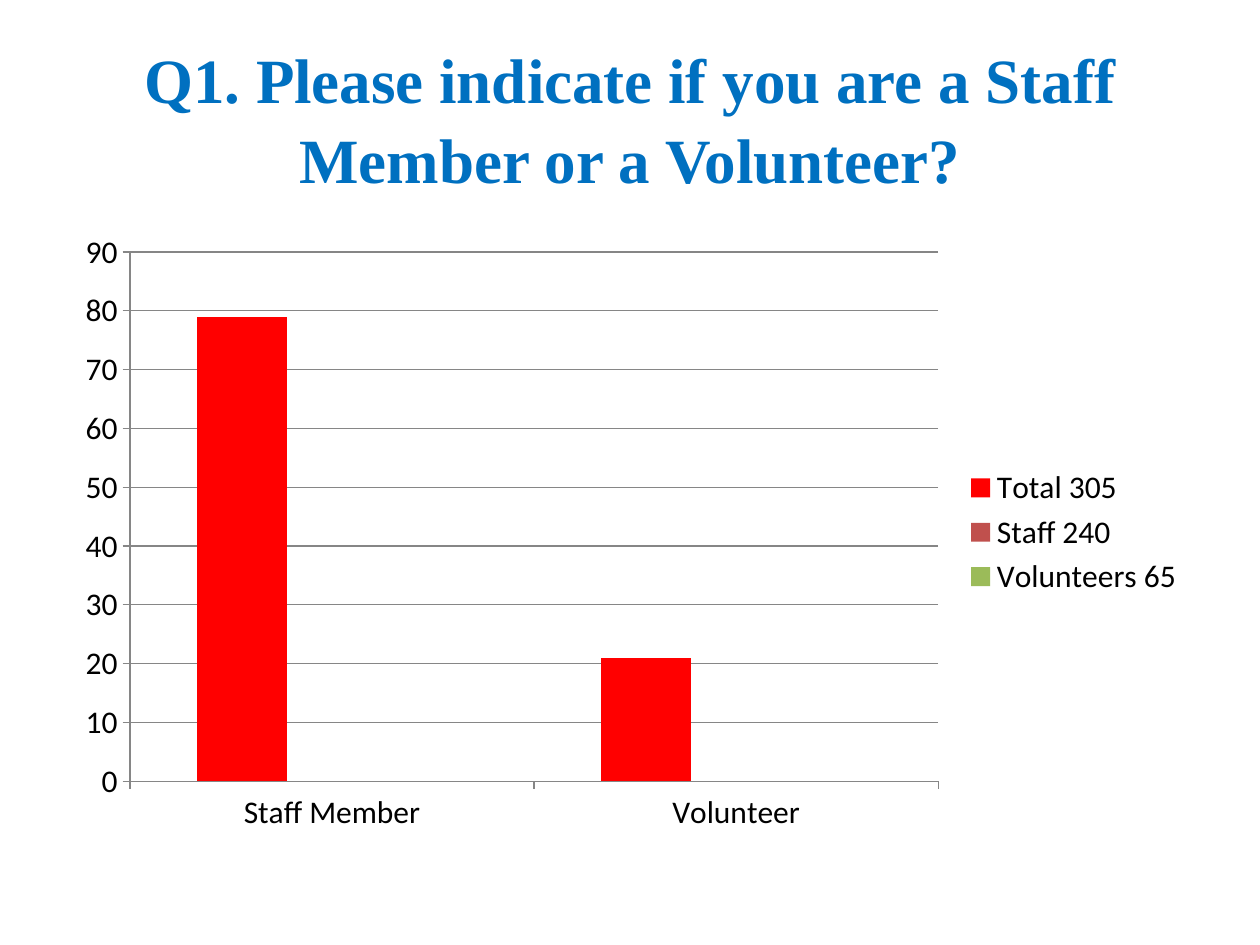
from pptx import Presentation
from pptx.chart.data import CategoryChartData
from pptx.dml.color import RGBColor
from pptx.enum.chart import XL_CHART_TYPE, XL_LEGEND_POSITION, XL_TICK_MARK
from pptx.enum.text import MSO_ANCHOR, PP_ALIGN
from pptx.util import Inches, Pt

BLUE = RGBColor(0x00, 0x70, 0xC0)
BLACK = RGBColor(0x00, 0x00, 0x00)
GRAY = RGBColor(0x86, 0x86, 0x86)
RED = RGBColor(0xFF, 0x00, 0x00)
BRICK = RGBColor(0xC0, 0x50, 0x4D)
GREEN = RGBColor(0x9B, 0xBB, 0x59)

CATEGORIES = ["Staff Member", "Volunteer"]
SERIES = [
    ("Total 305", (79, 21), RED),
    ("Staff 240", (None, None), BRICK),
    ("Volunteers 65", (None, None), GREEN),
]


def add_title(s, text):
    tb = s.shapes.add_textbox(Inches(0.5), Inches(0.3), Inches(9), Inches(1.25))
    tf = tb.text_frame
    tf.word_wrap = True
    tf.vertical_anchor = MSO_ANCHOR.MIDDLE
    tf.text = text
    p = tf.paragraphs[0]
    p.alignment = PP_ALIGN.CENTER
    p.line_spacing = 1.05
    font = p.runs[0].font
    font.name = "Times New Roman"
    font.size = Pt(36)
    font.bold = True
    font.color.rgb = BLUE


def style_line(line):
    line.color.rgb = GRAY
    line.width = Pt(0.75)


def style_axes(chart):
    for axis in (chart.category_axis, chart.value_axis):
        axis.major_tick_mark = XL_TICK_MARK.OUTSIDE
        axis.minor_tick_mark = XL_TICK_MARK.NONE
        style_line(axis.format.line)
    value_axis = chart.value_axis
    value_axis.minimum_scale = 0
    value_axis.maximum_scale = 90
    value_axis.major_unit = 10
    value_axis.has_major_gridlines = True
    style_line(value_axis.major_gridlines.format.line)


def add_response_chart(s):
    data = CategoryChartData()
    data.categories = CATEGORIES
    for name, values, _ in SERIES:
        data.add_series(name, values)
    chart = s.shapes.add_chart(
        XL_CHART_TYPE.COLUMN_CLUSTERED,
        Inches(0.5), Inches(1.75), Inches(9), Inches(4.95), data,
    ).chart
    chart.has_title = False
    chart.font.name = "Calibri"
    chart.font.size = Pt(18)
    chart.font.color.rgb = BLACK
    chart.has_legend = True
    chart.legend.position = XL_LEGEND_POSITION.RIGHT
    chart.legend.include_in_layout = False
    style_axes(chart)

    plot = chart.plots[0]
    plot.gap_width = 150
    plot.vary_by_categories = False
    for series, (_, _, color) in zip(plot.series, SERIES):
        series.format.fill.solid()
        series.format.fill.fore_color.rgb = color


def main():
    prs = Presentation()
    prs.slide_width = Inches(10)
    prs.slide_height = Inches(7.5)
    s = prs.slides.add_slide(prs.slide_layouts[6])
    add_title(s, "Q1. Please indicate if you are a Staff Member or a Volunteer?")
    add_response_chart(s)
    prs.save("out.pptx")


if __name__ == "__main__":
    main()
